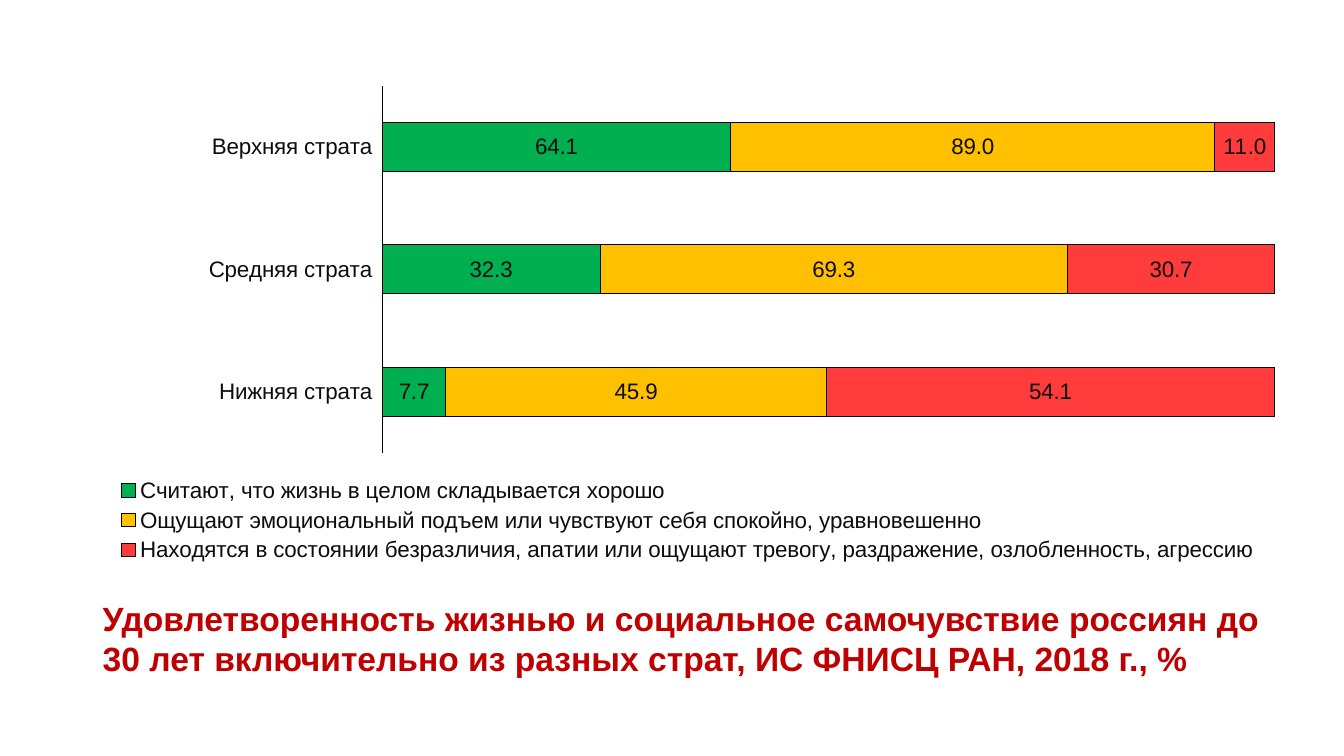
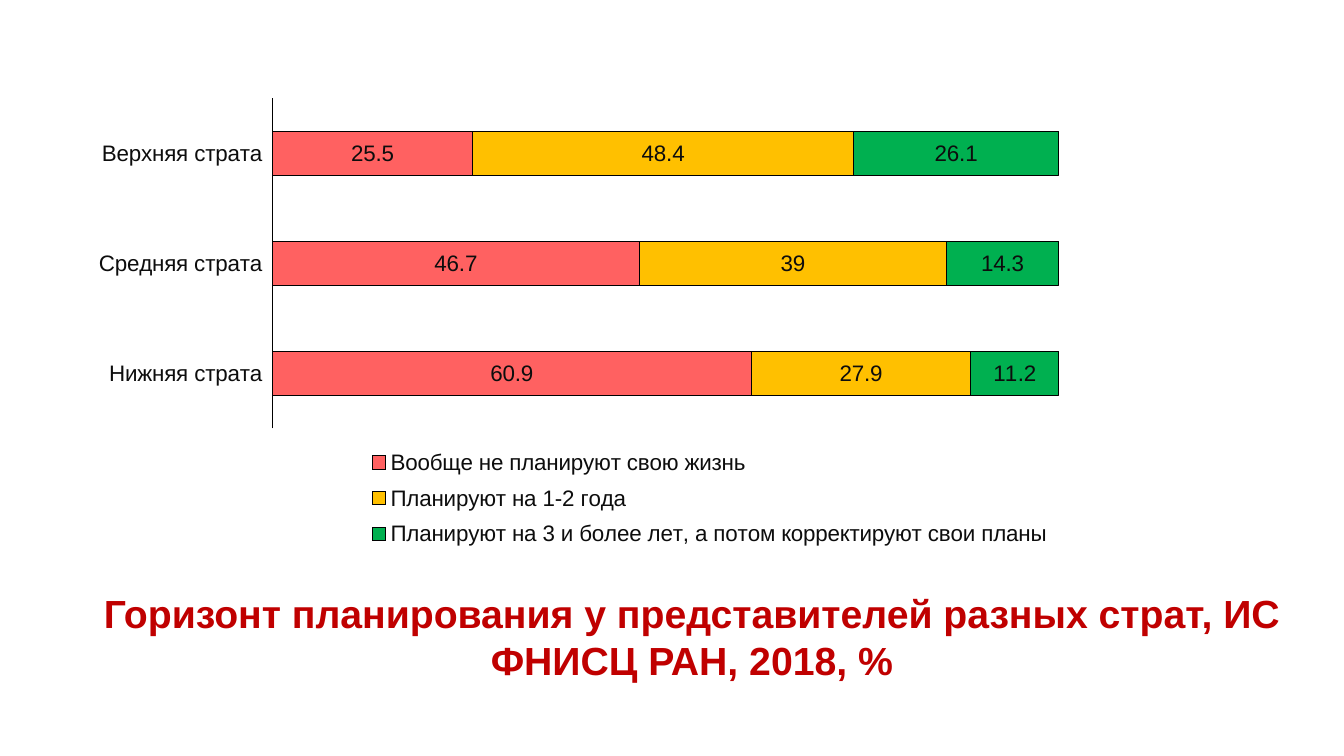
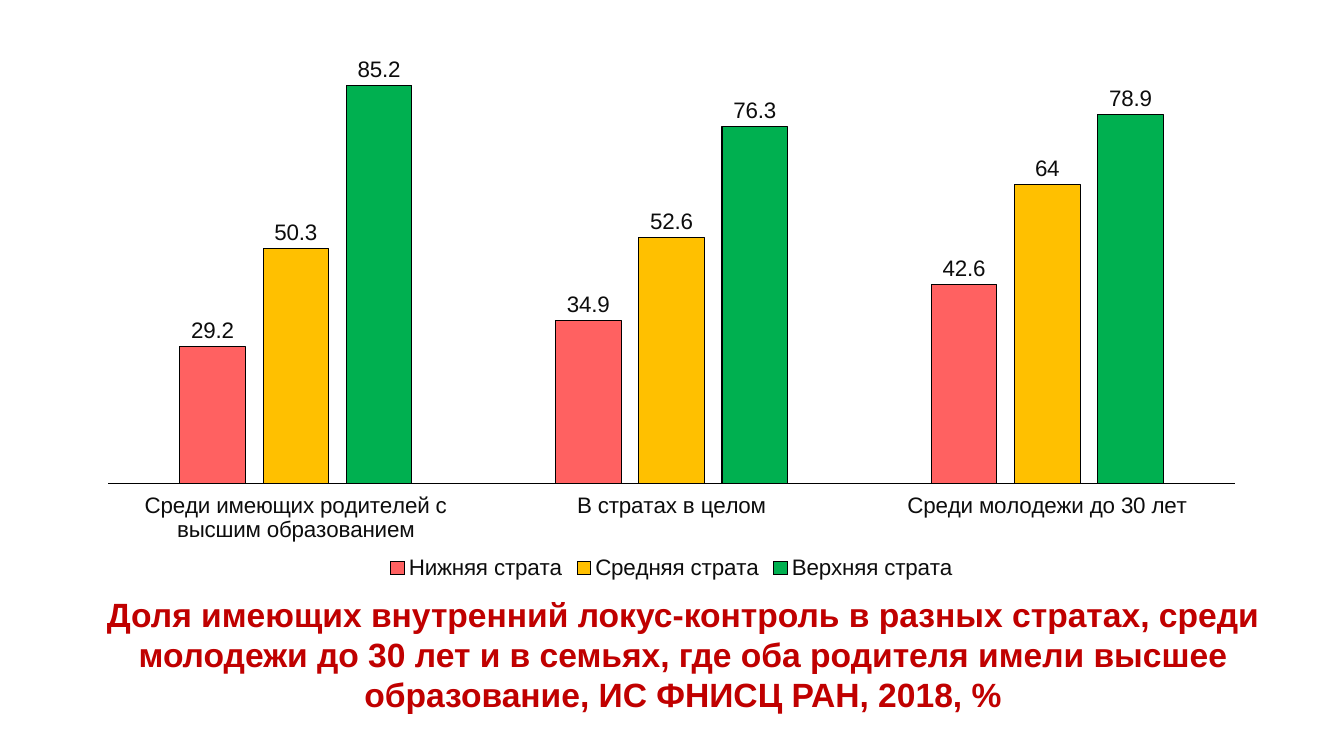
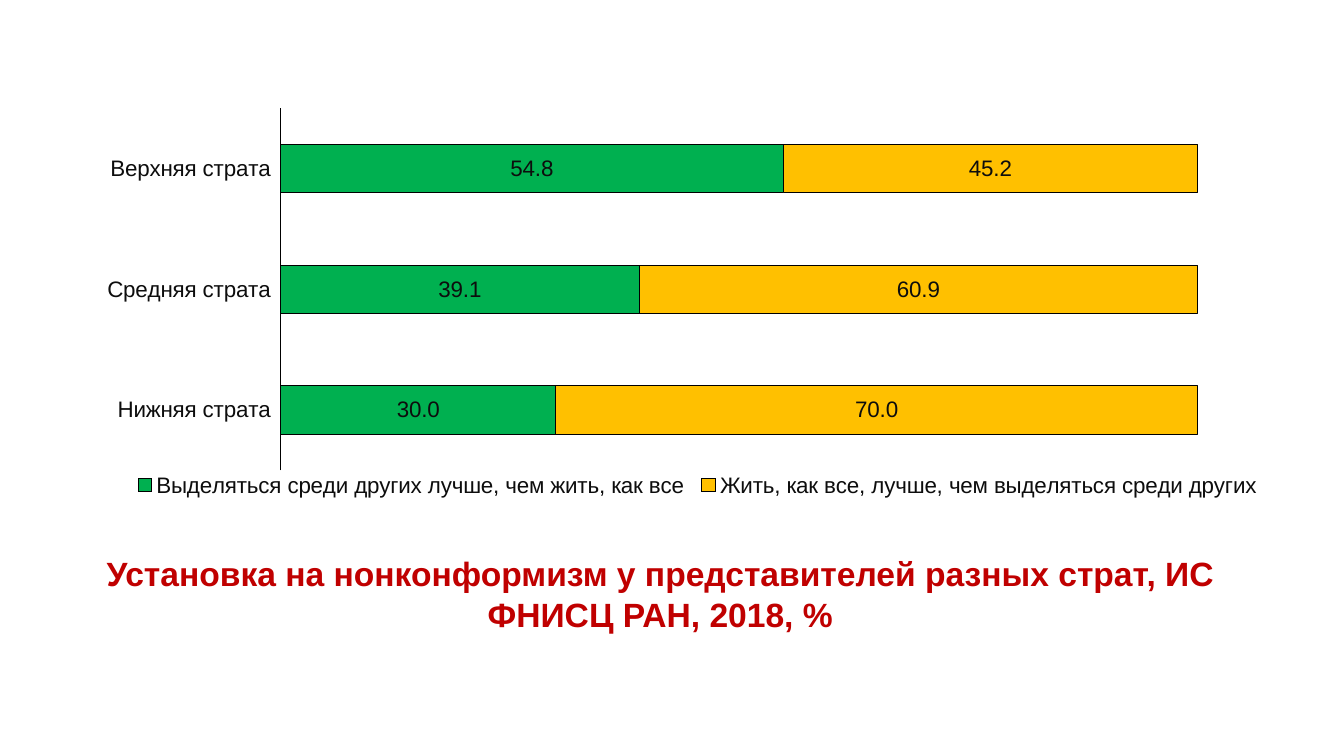
from dataclasses import dataclass

from lxml import etree
from pptx import Presentation
from pptx.chart.data import CategoryChartData
from pptx.dml.color import RGBColor
from pptx.enum.chart import (XL_CHART_TYPE, XL_LABEL_POSITION, XL_LEGEND_POSITION,
                             XL_TICK_LABEL_POSITION, XL_TICK_MARK)
from pptx.enum.text import MSO_ANCHOR, MSO_AUTO_SIZE, PP_ALIGN
from pptx.oxml.ns import qn
from pptx.util import Cm, Pt

LEFT, CENTER = PP_ALIGN.LEFT, PP_ALIGN.CENTER
BOTTOM, NO_FIT = MSO_ANCHOR.BOTTOM, MSO_AUTO_SIZE.NONE
STACKED, STACKED_100 = XL_CHART_TYPE.BAR_STACKED, XL_CHART_TYPE.BAR_STACKED_100
CLUSTERED = XL_CHART_TYPE.COLUMN_CLUSTERED
IN_BAR, ABOVE_BAR = XL_LABEL_POSITION.CENTER, XL_LABEL_POSITION.OUTSIDE_END
LEGEND_BOTTOM = XL_LEGEND_POSITION.BOTTOM
NO_TICK, LABELS_LOW = XL_TICK_MARK.NONE, XL_TICK_LABEL_POSITION.LOW

STRATA = ["Нижняя страта", "Средняя страта", "Верхняя страта"]


@dataclass(frozen=True)
class Theme:
    font: str = "Arial"
    title: str = "C00000"
    text: str = "0D0D0D"
    outline: str = "000000"
    green: str = "00B050"
    amber: str = "FFC000"
    red: str = "FF3B3B"
    coral: str = "FF6161"
    title_size: int = 24
    big_title_size: int = 28
    chart_size: int = 16
    line_width: float = 0.75


def place(parent, index, box, inner=False):
    """Fix a chart part at box: left, top, width, height as shares of the chart."""
    for old in parent.findall(qn("c:layout")):
        parent.remove(old)
    layout = etree.Element(qn("c:layout"))
    manual = etree.SubElement(layout, qn("c:manualLayout"))
    settings = [("layoutTarget", "inner")] if inner else []
    settings += [("xMode", "edge"), ("yMode", "edge"), *zip("xywh", box)]
    for tag, value in settings:
        etree.SubElement(manual, qn(f"c:{tag}")).set("val", str(value))
    parent.insert(index, layout)


class Deck:
    def __init__(self, theme):
        self.theme = theme
        self.prs = Presentation()
        self.prs.slide_width, self.prs.slide_height = Cm(33.87), Cm(19.05)
        self.s = None

    def slide(self):
        self.s = self.prs.slides.add_slide(self.prs.slide_layouts[6])

    def style_font(self, font, size, color):
        font.name, font.size = self.theme.font, Pt(size)
        font.color.rgb = RGBColor.from_string(color)

    def style_line(self, line):
        line.color.rgb = RGBColor.from_string(self.theme.outline)
        line.width = Pt(self.theme.line_width)

    def title(self, text, left, top, width, size=None, align=CENTER):
        tf = self.s.shapes.add_textbox(Cm(left), Cm(top), Cm(width), Cm(1.57)).text_frame
        tf.word_wrap, tf.auto_size, tf.vertical_anchor = True, NO_FIT, BOTTOM
        tf.text = text
        p = tf.paragraphs[0]
        p.alignment = align
        font = p.runs[0].font
        self.style_font(font, size or self.theme.title_size, self.theme.title)
        font.bold = True

    def chart(self, kind, box, categories, series, plot_box, legend_box=None,
              maximum=None, number_format="General"):
        """Add a bar chart; series holds (name, colour, values) rows."""
        data = CategoryChartData(number_format=number_format)
        data.categories = categories
        for name, _, values in series:
            data.add_series(name, values)
        chart = self.s.shapes.add_chart(kind, *map(Cm, box), data).chart
        chart.has_title = False
        self.style_font(chart.font, self.theme.chart_size, self.theme.text)

        plot = chart.plots[0]
        plot.vary_by_categories = False
        clustered = kind == CLUSTERED
        plot.gap_width, plot.overlap = (219, -27) if clustered else (150, 100)
        for ser, (_, color, _) in zip(plot.series, series):
            ser.format.fill.solid()
            ser.format.fill.fore_color.rgb = RGBColor.from_string(color)
            self.style_line(ser.format.line)
        plot.has_data_labels = True
        labels = plot.data_labels
        labels.show_value = True
        labels.position = ABOVE_BAR if clustered else IN_BAR
        labels.number_format, labels.number_format_is_linked = number_format, False
        self.style_font(labels.font, self.theme.chart_size, self.theme.text)

        axis = chart.category_axis
        axis.major_tick_mark = axis.minor_tick_mark = NO_TICK
        axis.tick_label_position = LABELS_LOW
        self.style_line(axis.format.line)
        axis = chart.value_axis
        axis.visible = axis.has_major_gridlines = False
        axis.minimum_scale = 0
        if maximum:
            axis.maximum_scale = maximum
        place(chart.element.find(".//" + qn("c:plotArea")), 0, plot_box, inner=True)

        chart.has_legend = True
        chart.legend.position = LEGEND_BOTTOM
        chart.legend.include_in_layout = False
        if legend_box:
            place(chart.element.find(".//" + qn("c:legend")), 1, legend_box)


def main():
    t = Theme()
    deck = Deck(t)

    deck.slide()
    deck.title("Удовлетворенность жизнью и социальное самочувствие россиян до 30 лет "
               "включительно из разных страт, ИС ФНИСЦ РАН, 2018 г., %",
               2.34, 15.65, 30.4, align=LEFT)
    deck.chart(STACKED_100, (1.93, 1.78, 30.81, 12.52), STRATA, [
        ("Считают, что жизнь в целом складывается хорошо", t.green, (7.7, 32.3, 64.1)),
        ("Ощущают эмоциональный подъем или чувствуют себя спокойно, уравновешенно",
         t.amber, (45.9, 69.3, 89)),
        ("Находятся в состоянии безразличия, апатии или ощущают тревогу, раздражение, "
         "озлобленность, агрессию", t.red, (54.1, 30.7, 11)),
    ], (0.25, 0.03, 0.73, 0.74), (0.03, 0.81, 0.94, 0.19), number_format="0.0")

    deck.slide()
    deck.title("Горизонт планирования у представителей разных страт, ИС ФНИСЦ РАН, 2018, %",
               1.93, 15.77, 31.01, t.big_title_size)
    deck.chart(STACKED, (1.93, 1.7, 29.01, 13), STRATA, [
        ("Вообще не планируют свою жизнь", t.coral, (60.9, 46.7, 25.5)),
        ("Планируют на 1-2 года", t.amber, (27.9, 39, 48.4)),
        ("Планируют на 3 и более лет, а потом корректируют свои планы",
         t.green, (11.2, 14.3, 26.1)),
    ], (0.17, 0.06, 0.82, 0.64), (0.25, 0.72, 0.6, 0.23), maximum=120)

    deck.slide()
    deck.title("Доля имеющих внутренний локус-контроль в разных стратах, среди молодежи "
               "до 30 лет и в семьях, где оба родителя имели высшее образование, "
               "ИС ФНИСЦ РАН, 2018, %", 1.52, 16.56, 31.39)
    deck.chart(CLUSTERED, (2.13, 1.32, 29.59, 13.41),
               ["Среди имеющих родителей с высшим образованием", "В стратах в целом",
                "Среди молодежи до 30 лет"],
               list(zip(STRATA, (t.coral, t.amber, t.green),
                        ((29.2, 34.9, 42.6), (50.3, 52.6, 64), (85.2, 76.3, 78.9)))),
               (0.02, 0.02, 0.96, 0.79), maximum=90)

    deck.slide()
    deck.title("Установка на нонконформизм у представителей разных страт, "
               "ИС ФНИСЦ РАН, 2018, %", 2.34, 14.53, 28.6)
    deck.chart(STACKED, (2.34, 2.51, 29.59, 10.62), STRATA, [
        ("Выделяться среди других лучше, чем жить, как все", t.green, (30, 39.1, 54.8)),
        ("Жить, как все, лучше, чем выделяться среди других", t.amber, (70, 60.9, 45.2)),
    ], (0.16, 0.02, 0.82, 0.86), (0.03, 0.88, 0.97, 0.07), maximum=105, number_format="0.0")

    deck.prs.save("out.pptx")


if __name__ == "__main__":
    main()
